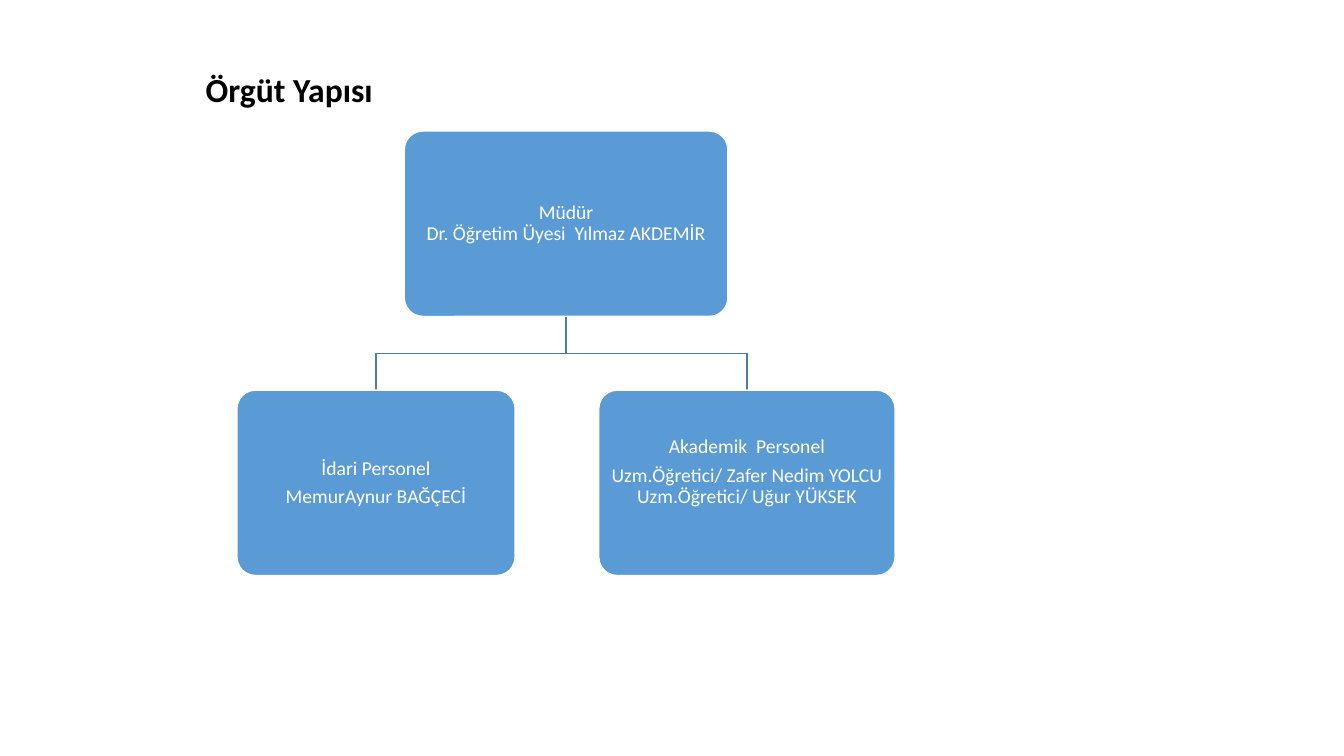
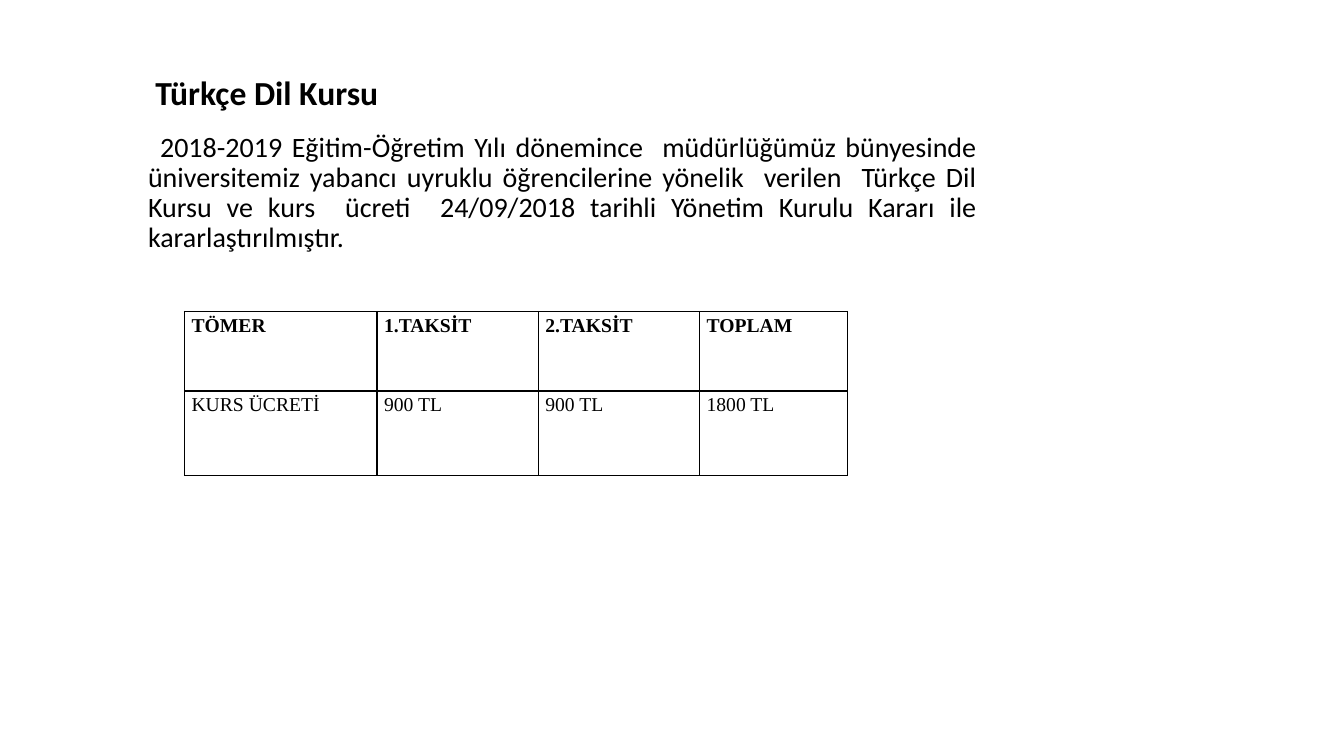
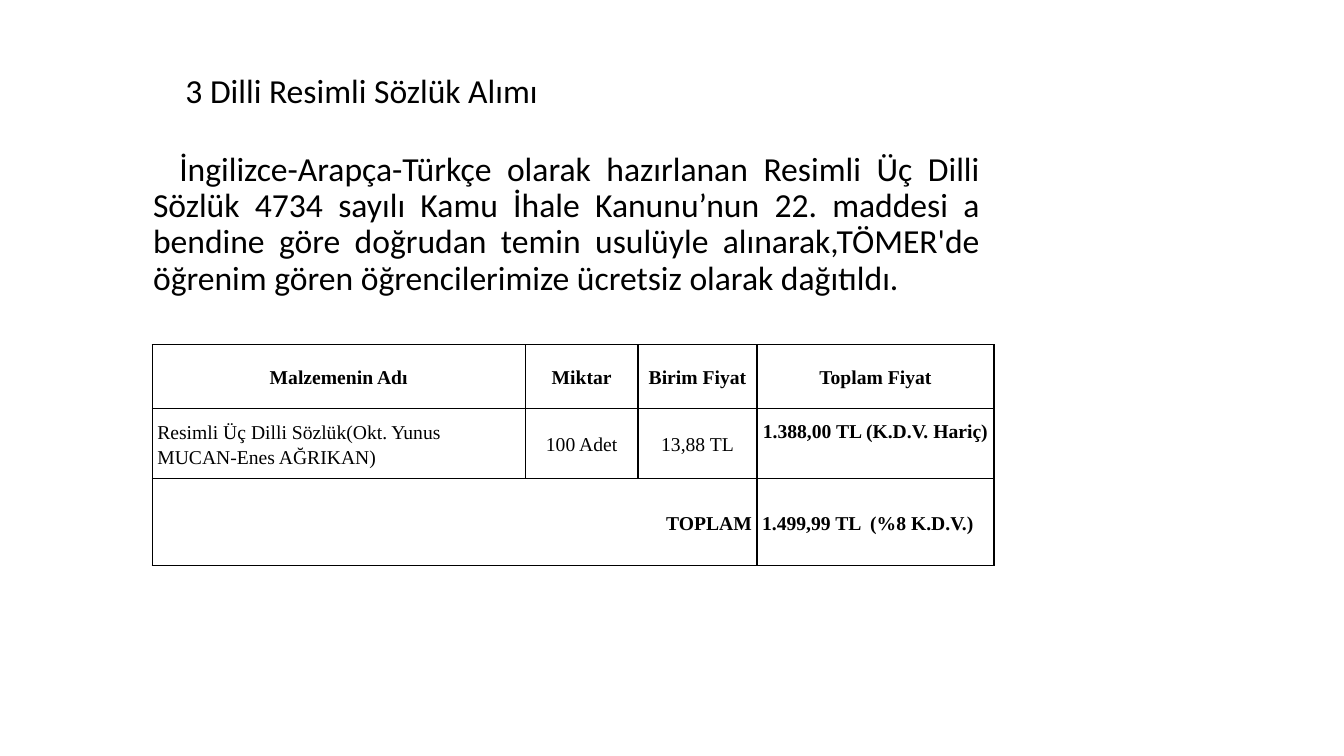
from dataclasses import dataclass

from lxml.etree import SubElement
from pptx import Presentation
from pptx.dml.color import RGBColor
from pptx.enum.shapes import MSO_SHAPE
from pptx.enum.text import MSO_ANCHOR, MSO_AUTO_SIZE, PP_ALIGN
from pptx.oxml import parse_xml
from pptx.oxml.ns import nsdecls, qn
from pptx.util import Inches, Pt

BLACK = RGBColor(0x00, 0x00, 0x00)
WHITE = RGBColor(0xFF, 0xFF, 0xFF)
BLUE = RGBColor(0x5B, 0x9B, 0xD5)
LINE_BLUE = RGBColor(0x49, 0x7C, 0xAB)
SANS, SERIF = "Calibri", "Times New Roman"
SLIDE_W, SLIDE_H = Inches(13.333), Inches(7.5)
LEFT, CENTER, RIGHT = PP_ALIGN.LEFT, PP_ALIGN.CENTER, PP_ALIGN.RIGHT
TOP, MIDDLE = MSO_ANCHOR.TOP, MSO_ANCHOR.MIDDLE


def across(share: float) -> int:
    """Percent of the slide width."""
    return round(SLIDE_W * share / 100)


def down(share: float) -> int:
    """Percent of the slide height."""
    return round(SLIDE_H * share / 100)


@dataclass(frozen=True)
class Box:
    """A frame in percent of the slide's width and height."""
    x: float
    y: float
    w: float
    h: float

    @property
    def frame(self) -> tuple[int, int, int, int]:
        return across(self.x), down(self.y), across(self.w), down(self.h)

    @property
    def center(self) -> float:
        return self.x + self.w / 2

    @property
    def bottom(self) -> float:
        return self.y + self.h


@dataclass(frozen=True)
class Unit:
    """One box of the organisation chart; a newline is a line break."""
    box: Box
    texts: tuple[str, ...]
    bottom_inset: float = 0.06


@dataclass(frozen=True)
class Cell:
    text: str
    bold: bool = False
    align: PP_ALIGN = LEFT
    span: int = 1
    bottom_inset: float = 0


@dataclass(frozen=True)
class Grid:
    """A table: columns and rows in percent of the slide."""
    x: float
    y: float
    cols: tuple[float, ...]
    rows: tuple[float, ...]
    cells: tuple[tuple[Cell, ...], ...]
    inset: float
    anchor: MSO_ANCHOR


# Text

def add_run(p, text: str, size: float, color: RGBColor = BLACK,
            font: str = SANS, bold: bool = False) -> None:
    r = p.add_run()
    r.text = text
    r.font.size, r.font.name, r.font.bold = Pt(size), font, bold
    r.font.color.rgb = color


def add_slide(prs, title: str, box: Box, bold: bool = True, anchor=MIDDLE):
    s = prs.slides.add_slide(prs.slide_layouts[5])
    sp = s.shapes.title
    sp.left, sp.top, sp.width, sp.height = box.frame
    tf = sp.text_frame
    tf.word_wrap, tf.auto_size = True, MSO_AUTO_SIZE.NONE
    tf.vertical_anchor = anchor
    p = tf.paragraphs[0]
    p.alignment, p.line_spacing = LEFT, 0.9
    add_run(p, title, 24, bold=bold)
    return s


def add_body(s, text: str, box: Box, size: float, indent: float) -> None:
    tf = s.shapes.add_textbox(*box.frame).text_frame
    tf.word_wrap = True
    p = tf.paragraphs[0]
    p.alignment, p.line_spacing = PP_ALIGN.JUSTIFY, 0.9
    pPr = p._p.get_or_add_pPr()
    pPr.set("marL", str(Inches(0.25)))
    pPr.set("indent", str(Inches(indent)))
    add_run(p, text, size)


# Organisation chart

def add_unit(s, unit: Unit) -> None:
    sp = s.shapes.add_shape(MSO_SHAPE.ROUNDED_RECTANGLE, *unit.box.frame)
    sp.shadow.inherit = False
    sp.adjustments[0] = 0.1
    sp.fill.solid()
    sp.fill.fore_color.rgb = BLUE
    sp.line.color.rgb, sp.line.width = WHITE, Pt(1)
    tf = sp.text_frame
    tf.word_wrap, tf.vertical_anchor = True, MIDDLE
    tf.margin_left = tf.margin_right = tf.margin_top = Inches(0.06)
    tf.margin_bottom = Inches(unit.bottom_inset)
    for i, text in enumerate(unit.texts):
        p = tf.add_paragraph() if i else tf.paragraphs[0]
        p.alignment, p.line_spacing, p.space_after = CENTER, 0.9, Pt(5)
        for j, line in enumerate(text.split("\n")):
            if j:
                p.add_line_break()
            add_run(p, line, 14, WHITE)


def add_branch(s, parent: Box, child: Box) -> None:
    middle = (parent.bottom + child.y) / 2
    fb = s.shapes.build_freeform(across(parent.center), down(parent.bottom))
    fb.add_line_segments([(across(parent.center), down(middle)),
                          (across(child.center), down(middle)),
                          (across(child.center), down(child.y))], close=False)
    sp = fb.convert_to_shape()
    sp.shadow.inherit = False
    sp.fill.background()
    sp.line.color.rgb, sp.line.width = LINE_BLUE, Pt(1)


# Tables

def add_borders(cell) -> None:
    tcPr = cell._tc.get_or_add_tcPr()
    for i, side in enumerate(("lnL", "lnR", "lnT", "lnB")):
        ln = parse_xml(f'<a:{side} {nsdecls("a")} w="{Pt(1)}"/>')
        fill = SubElement(ln, qn("a:solidFill"))
        SubElement(fill, qn("a:srgbClr")).set("val", str(BLACK))
        tcPr.insert(i, ln)


def add_grid(s, grid: Grid) -> None:
    box = Box(grid.x, grid.y, sum(grid.cols), sum(grid.rows))
    table = s.shapes.add_table(len(grid.rows), len(grid.cols), *box.frame).table
    table.first_row = table.horz_banding = False
    for col, share in zip(table.columns, grid.cols):
        col.width = across(share)
    for row, share in zip(table.rows, grid.rows):
        row.height = down(share)
    for cell in table.iter_cells():
        cell.fill.background()
        add_borders(cell)
    for i, row in enumerate(grid.cells):
        j = 0
        for item in row:
            cell = table.cell(i, j)
            if item.span > 1:
                cell.merge(table.cell(i, j + item.span - 1))
            cell.vertical_anchor = grid.anchor
            cell.margin_left = cell.margin_right = Inches(grid.inset)
            cell.margin_top = 0
            cell.margin_bottom = Inches(item.bottom_inset)
            p = cell.text_frame.paragraphs[0]
            p.alignment, p.line_spacing = item.align, 1.15
            add_run(p, item.text, 14, font=SERIF, bold=item.bold)
            j += item.span


# Content

UNIT_H, STAFF_Y = 24.53, 51.6
DIRECTOR = Unit(Box(30.08, 17.33, 24.08, UNIT_H),
                ("Müdür\nDr. Öğretim Üyesi  Yılmaz AKDEMİR",))
STAFF = (
    Unit(Box(17.63, STAFF_Y, 20.7, UNIT_H),
         ("İdari Personel", "MemurAynur BAĞÇECİ")),
    Unit(Box(44.55, STAFF_Y, 22.05, UNIT_H),
         ("Akademik  Personel",
          "Uzm.Öğretici/ Zafer Nedim YOLCU Uzm.Öğretici/ Uğur YÜKSEK"),
         bottom_inset=0.27),
)

COURSE_TEXT = (
    "2018-2019 Eğitim-Öğretim Yılı dönemince  müdürlüğümüz bünyesinde "
    "üniversitemiz yabancı uyruklu öğrencilerine yönelik  verilen  Türkçe Dil "
    "Kursu ve kurs  ücreti  24/09/2018 tarihli Yönetim Kurulu Kararı ile "
    "kararlaştırılmıştır.")
FEES = Grid(
    13.73, 41.2, (14.33, 12, 12, 11.03), (10.53, 11.2),
    (tuple(Cell(t, bold=True) for t in ("TÖMER", "1.TAKSİT", "2.TAKSİT", "TOPLAM")),
     tuple(Cell(t) for t in ("KURS ÜCRETİ", "900 TL", "900 TL", "1800 TL"))),
    inset=0.07, anchor=TOP)

DICTIONARY_TEXT = (
    "İngilizce-Arapça-Türkçe olarak hazırlanan Resimli Üç Dilli Sözlük 4734 "
    "sayılı Kamu İhale Kanunu’nun 22. maddesi a bendine göre doğrudan temin "
    "usulüyle alınarak,TÖMER'de öğrenim gören öğrencilerimize ücretsiz olarak "
    "dağıtıldı.")
PURCHASE = Grid(
    11.33, 45.6, (27.75, 8.4, 8.85, 17.63), (8.4, 9.33, 11.47),
    (tuple(Cell(t, bold=True, align=CENTER) for t in
           ("Malzemenin Adı", "Miktar", "Birim Fiyat", "Toplam Fiyat")),
     (Cell("Resimli Üç Dilli Sözlük(Okt. Yunus MUCAN-Enes AĞRIKAN)"),
      Cell("100 Adet", align=CENTER),
      Cell("13,88 TL", align=CENTER),
      Cell("1.388,00 TL (K.D.V. Hariç)", bold=True, align=CENTER,
           bottom_inset=0.26)),
     (Cell("TOPLAM", bold=True, align=RIGHT, span=3),
      Cell("1.499,99 TL  (%8 K.D.V.)", bold=True))),
    inset=0.05, anchor=MIDDLE)


def main() -> None:
    prs = Presentation()
    prs.slide_width, prs.slide_height = SLIDE_W, SLIDE_H

    # Organisation
    s = add_slide(prs, "Örgüt Yapısı", Box(14.55, 9.07, 55.5, 6.67), anchor=TOP)
    for unit in STAFF:
        add_branch(s, DIRECTOR.box, unit.box)
    for unit in (DIRECTOR, *STAFF):
        add_unit(s, unit)

    # Language course
    s = add_slide(prs, "Türkçe Dil Kursu", Box(10.8, 8.93, 63.08, 7.07))
    add_body(s, COURSE_TEXT, Box(8.4, 16.93, 65.03, 21), 20, indent=0.12)
    add_grid(s, FEES)

    # Dictionary purchase
    s = add_slide(prs, "3 Dilli Resimli Sözlük Alımı",
                  Box(13.05, 10.27, 80.03, 3.87), bold=False)
    add_body(s, DICTIONARY_TEXT, Box(8.78, 19.47, 64.88, 25), 24, indent=0.26)
    add_grid(s, PURCHASE)

    prs.save("out.pptx")


if __name__ == "__main__":
    main()
